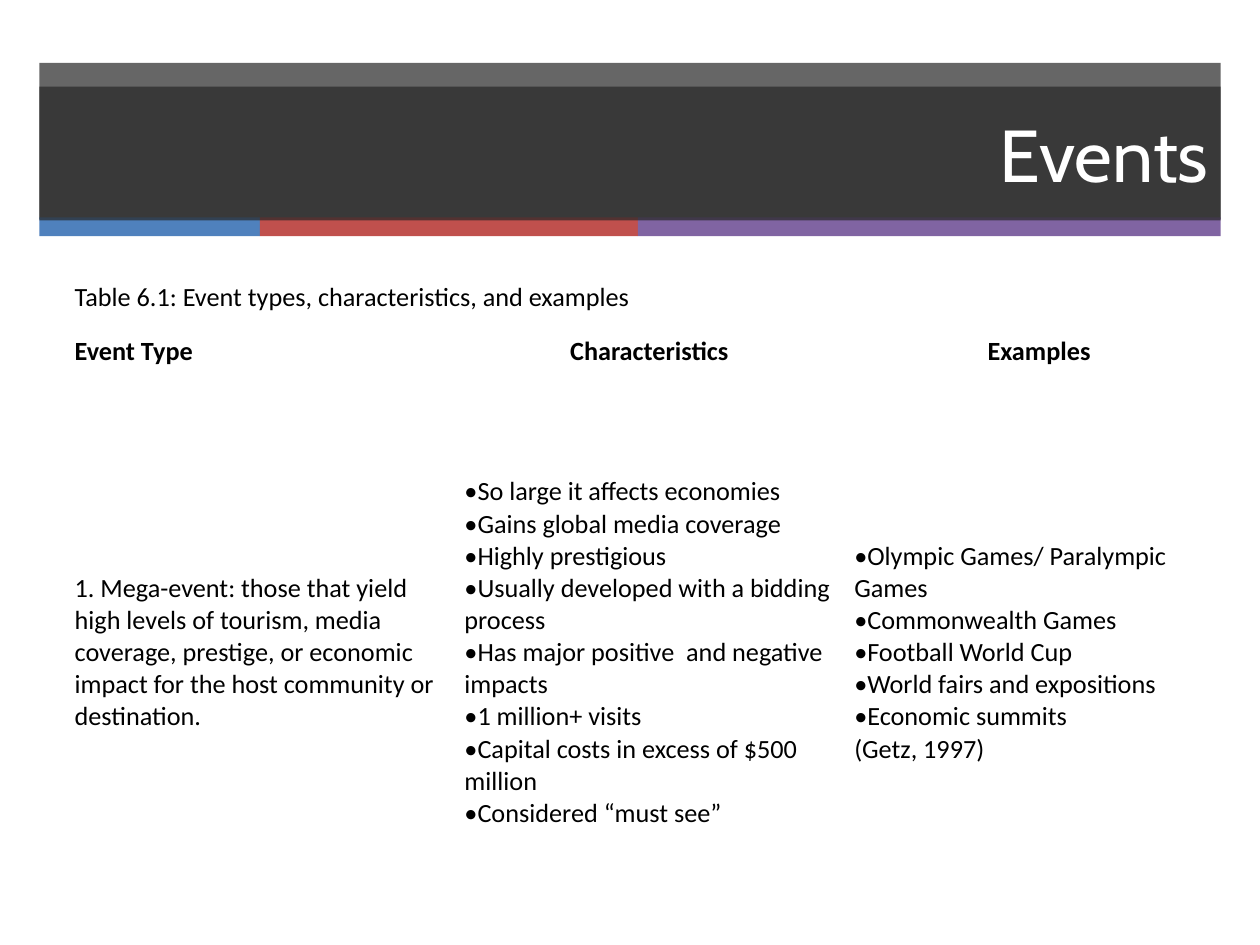
from dataclasses import dataclass

from lxml import etree
from pptx import Presentation
from pptx.dml.color import RGBColor
from pptx.enum.shapes import MSO_SHAPE
from pptx.enum.text import MSO_ANCHOR, PP_ALIGN
from pptx.oxml.ns import qn
from pptx.util import Inches, Pt

RECT = MSO_SHAPE.RECTANGLE
MIDDLE = MSO_ANCHOR.MIDDLE
LEFT, CENTER, RIGHT = PP_ALIGN.LEFT, PP_ALIGN.CENTER, PP_ALIGN.RIGHT
COLS, ROWS = 32, 30
BULLET = "•"


@dataclass(frozen=True)
class Theme:
    dark: str = "262626"
    stripes: tuple = ("4F81BD", "C0504D", "8064A2")
    light: str = "FFFFFF"
    ink: str = "000000"
    title_font: str = "Cabin"
    body_font: str = "Calibri"
    title_size: int = 42
    body_size: int = 15
    band_alpha: int = 70


class Deck:
    """Draws styled elements on the current slide, placed on a 32 by 30 grid."""

    def __init__(self, theme):
        self.theme = theme
        self.prs = Presentation()
        self.prs.slide_width, self.prs.slide_height = Inches(10), Inches(7.5)
        self.s = self.prs.slides.add_slide(self.prs.slide_layouts[6])

    def x(self, cols):
        return round(self.prs.slide_width * cols / COLS)

    def y(self, rows):
        return round(self.prs.slide_height * rows / ROWS)

    def rect(self, left, top, width, height, color, alpha=100):
        sp = self.s.shapes.add_shape(
            RECT, self.x(left), self.y(top), self.x(width), self.y(height))
        sp.shadow.inherit = False
        sp.line.fill.background()
        sp.fill.solid()
        sp.fill.fore_color.rgb = RGBColor.from_string(color)
        if alpha < 100:
            clr = sp.fill._xPr.find(qn("a:solidFill"))[0]
            etree.SubElement(clr, qn("a:alpha"), val=str(alpha * 1000))
        return sp

    def stripes(self, left, top, widths, height):
        for width, color in zip(widths, self.theme.stripes):
            self.rect(left, top, width, height, color)
            left += width

    def run(self, p, text, font, size, color, bold=False):
        r = p.add_run()
        r.text = text
        r.font.name, r.font.size, r.font.bold = font, Pt(size), bold
        r.font.color.rgb = RGBColor.from_string(color)

    def title(self, text, left, top, width, height):
        t = self.theme
        sp = self.rect(left, top, width, height, t.dark, t.band_alpha)
        tf = sp.text_frame
        tf.word_wrap, tf.vertical_anchor = True, MIDDLE
        p = tf.paragraphs[0]
        p.alignment = RIGHT
        self.run(p, text, t.title_font, t.title_size, t.light)

    def bullet(self, p):
        pPr = p._p.get_or_add_pPr()
        pPr.set("marL", "0")
        pPr.set("indent", "0")
        etree.SubElement(pPr, qn("a:buFont"), typeface=self.theme.body_font)
        etree.SubElement(pPr, qn("a:buChar"), char=BULLET)

    def cell(self, cell, lines, align=LEFT, bold=False):
        t = self.theme
        cell.fill.background()
        cell.vertical_anchor = MIDDLE
        cell.margin_left = cell.margin_right = Inches(0.08)
        cell.margin_top = cell.margin_bottom = Inches(0.04)
        tf = cell.text_frame
        for i, line in enumerate(lines):
            p = tf.add_paragraph() if i else tf.paragraphs[0]
            p.alignment = align
            if line.startswith(BULLET):
                self.bullet(p)
            self.run(p, line.removeprefix(BULLET), t.body_font, t.body_size, t.ink, bold)

    def table(self, caption, headers, body, left, top, width, heights):
        table = self.s.shapes.add_table(
            len(heights), len(headers), self.x(left), self.y(top),
            self.x(width), self.y(sum(heights))).table
        table.first_row = table.horz_banding = False
        for row, height in zip(table.rows, heights):
            row.height = self.y(height)
        table.cell(0, 0).merge(table.cell(0, len(headers) - 1))
        self.cell(table.cell(0, 0), [caption])
        for c, (header, lines) in enumerate(zip(headers, body)):
            self.cell(table.cell(1, c), [header], CENTER if c else LEFT, True)
            self.cell(table.cell(2, c), lines)


EVENT_TYPE = [
    "1. Mega-event: those that yield high levels of tourism, media coverage, "
    "prestige, or economic impact for the host community or destination.",
]
CHARACTERISTICS = [
    "•So large it affects economies",
    "•Gains global media coverage",
    "•Highly prestigious",
    "•Usually developed with a bidding process",
    "•Has major positive  and negative impacts",
    "•1 million+ visits",
    "•Capital costs in excess of $500 million",
    "•Considered “must see”",
]
EXAMPLES = [
    "•Olympic Games/ Paralympic Games",
    "•Commonwealth Games",
    "•Football World Cup",
    "•World fairs and expositions",
    "•Economic summits",
    "(Getz, 1997)",
]


def main():
    theme = Theme()
    deck = Deck(theme)
    deck.rect(1, 2, 30, 4.96, theme.dark, theme.band_alpha)
    deck.stripes(1, 6.9, (5.6, 9.6, 14.8), 0.6)
    deck.title("Events", 1, 2.75, 30, 4.25)
    deck.table(
        "Table 6.1: Event types, characteristics, and examples",
        ("Event Type", "Characteristics", "Examples"),
        (EVENT_TYPE, CHARACTERISTICS, EXAMPLES),
        1.64, 8.58, 29.7, (1.72, 1.72, 17.4))
    deck.prs.save("out.pptx")


if __name__ == "__main__":
    main()
